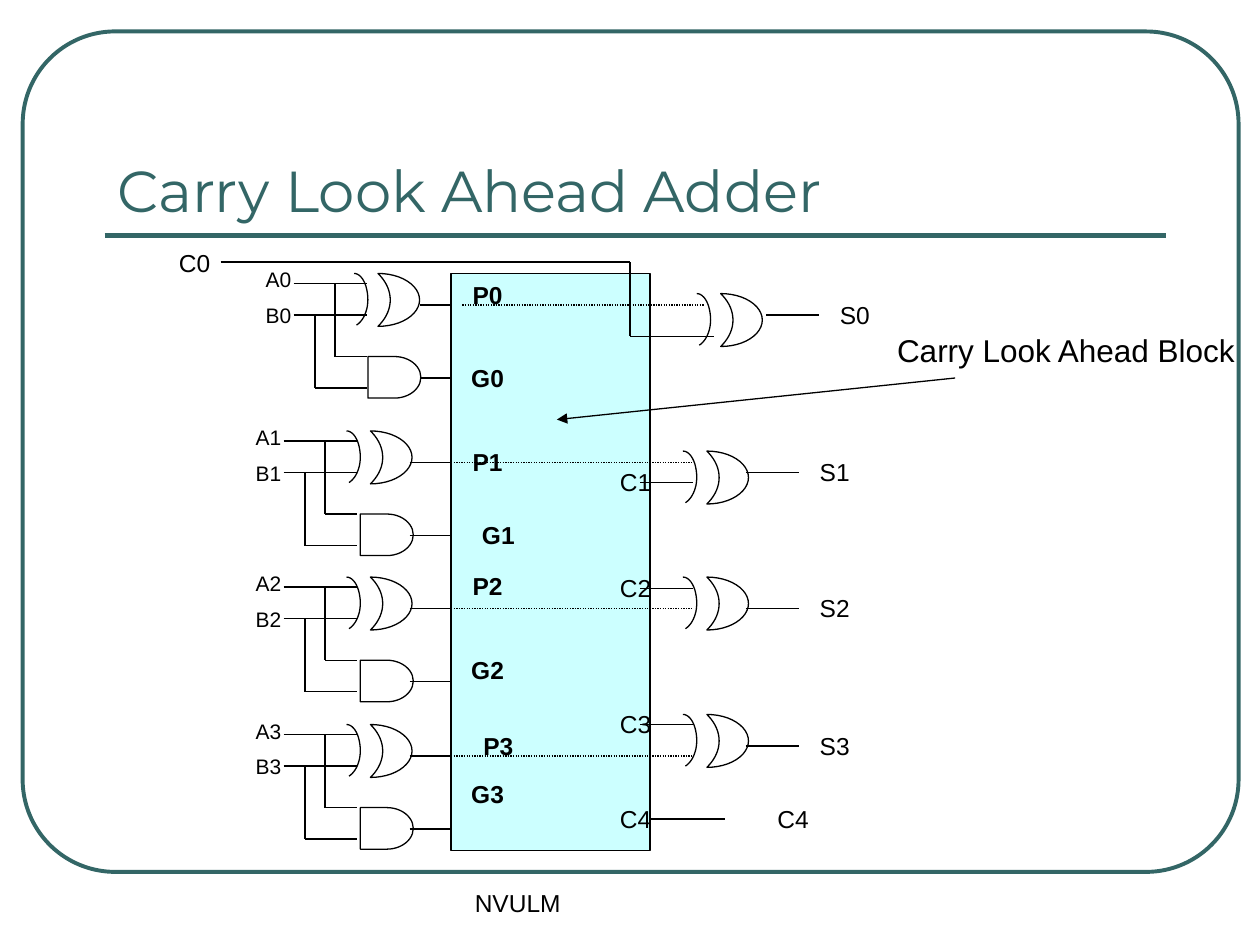
import pptx
import pptx.util
import pptx.dml.color
import pptx.enum.dml
import pptx.enum.shapes
import pptx.enum.text
import pptx.oxml.ns
from lxml import etree

Inches = pptx.util.Inches
Pt = pptx.util.Pt
KIND = pptx.enum.shapes.MSO_SHAPE
ALIGN = pptx.enum.text.PP_ALIGN
COLORS = {"teal": "336666", "ink": "000000", "block": "CCFFFF"}


def color(name):
    return pptx.dml.color.RGBColor.from_string(COLORS[name])


def stroke(shape, name="ink", width=0.75):
    shape.line.color.rgb = color(name)
    shape.line.width = Pt(width)


def add_shape(shapes, kind, left, top, width, height, fill=None):
    shape = shapes.add_shape(
        kind, Inches(left), Inches(top), Inches(width), Inches(height))
    shape.shadow.inherit = False
    if fill:
        shape.fill.solid()
        shape.fill.fore_color.rgb = color(fill)
    else:
        shape.fill.background()
    stroke(shape)
    return shape


def add_wire(slide, x1, y1, x2, y2):
    wire = slide.shapes.add_connector(
        pptx.enum.shapes.MSO_CONNECTOR.STRAIGHT,
        Inches(x1), Inches(y1), Inches(x2), Inches(y2))
    stroke(wire)
    etree.SubElement(wire._element.spPr, pptx.oxml.ns.qn("a:effectLst"))
    return wire


def add_dots(slide, x1, x2, y):
    wire = add_wire(slide, x1, y, x2, y)
    wire.line.dash_style = pptx.enum.dml.MSO_LINE.ROUND_DOT


def add_arrow(slide, x1, y1, x2, y2):
    wire = add_wire(slide, x1, y1, x2, y2)
    line = wire._element.spPr.get_or_add_ln()
    etree.SubElement(line, pptx.oxml.ns.qn("a:tailEnd")).set("type", "triangle")


def add_text(slide, lines, left, top, width=0.75, height=0.33, size=14,
             bold=False, gaps=None, align=ALIGN.CENTER):
    box = slide.shapes.add_textbox(
        Inches(left), Inches(top), Inches(width), Inches(height))
    frame = box.text_frame
    frame.word_wrap = True
    frame.text = "\n".join(lines)
    for para, gap in zip(frame.paragraphs, gaps or [0] * len(lines)):
        para.alignment = align
        para.space_before = Pt(gap)
        para.font.name = "Arial"
        para.font.size = Pt(size)
        para.font.bold = bold
        para.font.color.rgb = color("ink")


def curve(start, first, second, end, steps=12):
    for step in range(1, steps + 1):
        t = step / steps
        parts = ((1 - t) ** 3, 3 * t * (1 - t) ** 2, 3 * t * t * (1 - t), t ** 3)
        yield tuple(sum(part * point[axis] for part, point
                        in zip(parts, (start, first, second, end)))
                    for axis in (0, 1))


def add_xor(slide, left, top):
    group = slide.shapes.add_group_shape()
    moon = add_shape(group.shapes, KIND.MOON, left + 0.19, top, 0.33, 0.42)
    moon.adjustments[0] = 0.705
    moon.rotation = 180
    points = [*curve((0, 0), (0.06, 0), (0.11, 0.09), (0.11, 0.21)),
              *curve((0.11, 0.21), (0.11, 0.3), (0.07, 0.38), (0.02, 0.41))]
    pen = group.shapes.build_freeform(Inches(left), Inches(top), scale=1.0)
    pen.add_line_segments(
        [(Inches(left + x), Inches(top + y)) for x, y in points], close=False)
    arc = pen.convert_to_shape()
    arc.shadow.inherit = False
    arc.fill.background()
    stroke(arc)


def add_stage(slide, index, left, gate, top):
    add_xor(slide, gate, top)
    add_shape(slide.shapes, KIND.FLOWCHART_DELAY, gate + 0.11, top + 0.66, 0.42, 0.33)
    for y, bend in ((top + 0.08, left + 0.33), (top + 0.33, left + 0.17)):
        add_wire(slide, left, y, left + 0.58, y)
        add_wire(slide, bend, y, bend, y + 0.58)
        add_wire(slide, bend, y + 0.58, left + 0.58, y + 0.58)
    for y in (top + 0.25, top + 0.83):
        add_wire(slide, left + 1, y, 3.58, y)
    add_text(slide, [f"A{index}", f"B{index}"], left - 0.33, top - 0.1,
             0.42, 0.6, 12, gaps=[0, 6])


def add_sum(slide, index, left, top, tail, out):
    add_xor(slide, left, top)
    add_wire(slide, tail, out, tail + 0.42, out)
    add_text(slide, [f"S{index}"], tail + 0.33, out - 0.17)


def add_frame(slide):
    frame = add_shape(slide.shapes, KIND.ROUNDED_RECTANGLE, 0.18, 0.25, 9.65, 6.67)
    frame.adjustments[0] = 0.11
    stroke(frame, "teal", 2.25)
    rule = add_wire(slide, 0.83, 1.87, 9.25, 1.87)
    stroke(rule, "teal", 3)


def add_title(slide, text):
    title = slide.shapes.title
    title.left, title.top = Inches(0.83), Inches(0.58)
    title.width, title.height = Inches(8.41), Inches(1.25)
    frame = title.text_frame
    frame.text = text
    frame.vertical_anchor = pptx.enum.text.MSO_ANCHOR.BOTTOM
    para = frame.paragraphs[0]
    para.alignment = ALIGN.LEFT
    para.font.name = "Montserrat"
    para.font.size = Pt(33)
    para.font.color.rgb = color("teal")


def add_names(slide):
    steps = [2, 2, 3, 2, 3]
    gaps = [0] + [23.5 * step - 16.1 for step in steps]
    add_text(slide, ["P0", "G0", "P1", "P2", "G2", "G3"], 3.58, 2.17,
             0.58, 4.52, bold=True, gaps=gaps)
    add_text(slide, ["G1"], 3.58, 4.08, bold=True)
    add_text(slide, ["P3"], 3.58, 5.75, bold=True)


def add_carries(slide):
    add_wire(slide, 1.75, 2.08, 5, 2.08)
    add_wire(slide, 5, 2.08, 5, 2.67)
    add_wire(slide, 5, 2.67, 5.67, 2.67)
    add_text(slide, ["C0"], 1.17, 1.92)
    for index, y in enumerate((3.83, 4.67, 5.75), 1):
        add_wire(slide, 5.08, y, 5.5, y)
        add_text(slide, [f"C{index}"], 4.67, y - 0.17)
    add_wire(slide, 5.17, 6.5, 5.75, 6.5)
    for left in (4.67, 5.92):
        add_text(slide, ["C4"], left, 6.33)


def main():
    deck = pptx.Presentation()
    deck.slide_width, deck.slide_height = Inches(10), Inches(7.5)
    slide = deck.slides.add_slide(deck.slide_layouts[5])
    add_frame(slide)
    add_title(slide, "Carry Look Ahead Adder")
    add_shape(slide.shapes, KIND.RECTANGLE, 3.58, 2.17, 1.58, 4.58, "block")
    stages = ((2.33, 2.81, 2.17), (2.25, 2.75, 3.42),
              (2.25, 2.75, 4.58), (2.25, 2.75, 5.75))
    for index, (left, gate, top) in enumerate(stages):
        add_stage(slide, index, left, gate, top)
        start = 3.58 if index else 3.67
        add_dots(slide, start, start + 1.92, top + 0.25)
    add_names(slide)
    add_carries(slide)
    sums = ((5.53, 2.33, 6.08, 2.5), (5.42, 3.58, 5.92, 3.75),
            (5.42, 4.58, 5.92, 4.83), (5.42, 5.67, 5.92, 5.92))
    for index, place in enumerate(sums):
        add_sum(slide, index, *place)
    add_arrow(slide, 7.58, 3, 4.42, 3.33)
    add_text(slide, ["Carry Look Ahead Block"], 6.92, 2.58, 3.08, 0.4, 18)
    add_text(slide, ["NVULM"], 3.67, 7, 3.16, 0.5, align=ALIGN.LEFT)
    deck.save("out.pptx")


if __name__ == "__main__":
    main()
